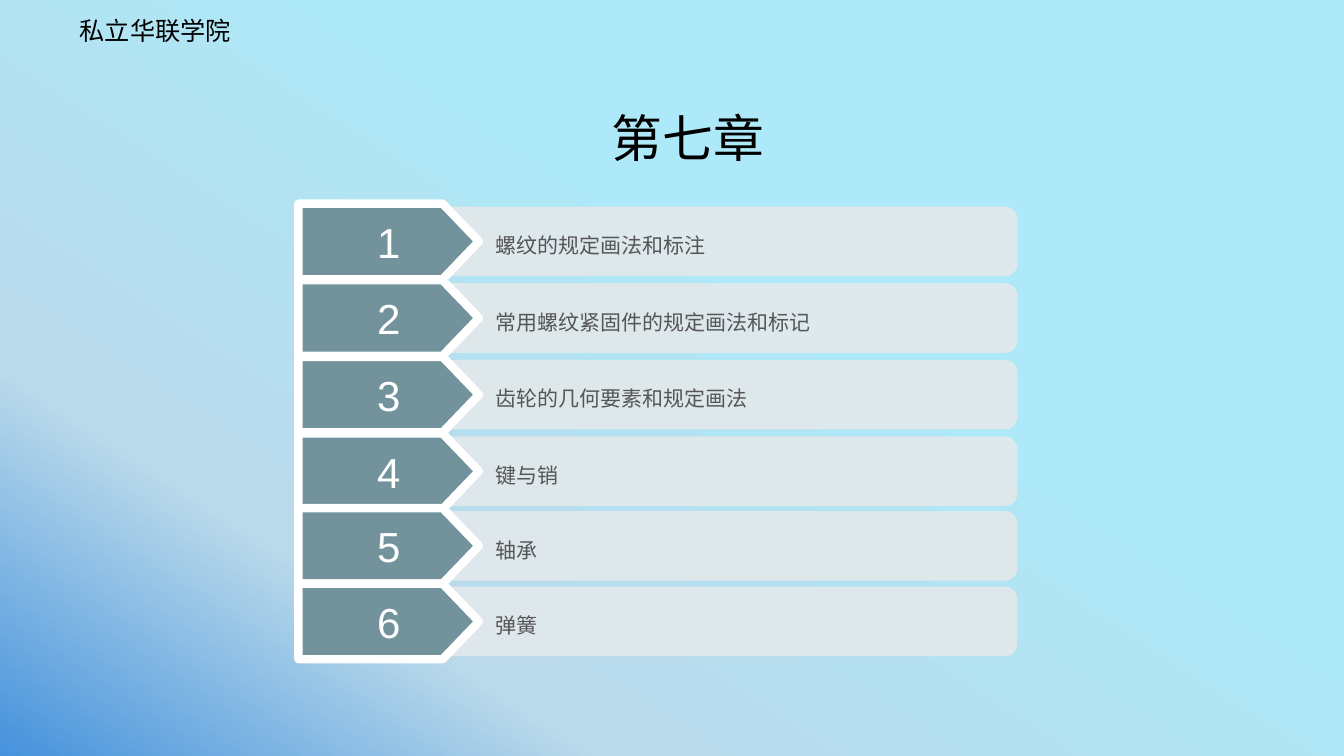
from copy import deepcopy
from math import cos, sin, radians
from pptx import Presentation
from pptx.dml.color import RGBColor as RGB
from pptx.enum.shapes import MSO_SHAPE as Shp
from pptx.enum.text import PP_ALIGN as Al, MSO_ANCHOR as Anc
from pptx.oxml.ns import qn
from pptx.util import Pt
from lxml.etree import SubElement as Sub

PX = 9144  # 100 px to the inch
theme = dict(
    sky=[(0, "4692DC"), 24, "BADAEB", 62, "ADE9F8"][:1]
    + [(0.24, "BADAEB"), (0.62, "ADE9F8")],
    ink="000000", bar="E3E9EB", tag="72939C", edge="FFFFFF", note="565656",
    face="Arial", cjk="Noto Sans CJK JP",
    head=18, title=36.3, item=15, num=30,
)
items = [
    (202, "螺纹的规定画法和标注"),
    (278, "常用螺纹紧固件的规定画法和标记"),
    (354, "齿轮的几何要素和规定画法"),
    (430, "键与销"),
    (504, "轴承"),
    (579, "弹簧"),
]


def write(shape, text, size, color, pad, face="face", align=Al.LEFT, gap=1.0,
          anchor=Anc.MIDDLE):
    frame = shape.text_frame
    frame.word_wrap = True
    frame.vertical_anchor = anchor
    (frame.margin_left, frame.margin_top,
     frame.margin_right, frame.margin_bottom) = [n * PX for n in pad]
    para = frame.paragraphs[0]
    para.text = text
    para.alignment = align
    para.line_spacing = gap
    font = para.font
    font.name, font.size = theme[face], Pt(theme[size])
    font.color.rgb = RGB.from_string(theme[color])


def paint(shape, color):
    shape.shadow.inherit = False
    shape.fill.solid()
    shape.fill.fore_color.rgb = RGB.from_string(theme[color])


deck = Presentation()
deck.slide_width, deck.slide_height = 1333 * PX, 750 * PX
slide = deck.slides.add_slide(deck.slide_layouts[6])
shapes = slide.shapes

# Background gradient, rising to the upper right
fill = slide.background.fill
fill.gradient()
fill.gradient_angle = 57
stop = slide._element.find(".//" + qn("a:gs"))
stop.addnext(deepcopy(stop))
for stop, (pos, color) in zip(fill.gradient_stops, theme["sky"]):
    stop.position = pos
    stop.color.rgb = RGB.from_string(color)

# School name and chapter title
head = shapes.add_textbox(74 * PX, 10 * PX, 294 * PX, 40 * PX)
write(head, "私立华联学院", "head", "ink", (5, 5, 5, 5), "cjk", anchor=Anc.TOP)
title = shapes.add_textbox(387 * PX, 117 * PX, 591 * PX, 57 * PX)
write(title, "第七章", "title", "ink", (10, 5, 10, 5), align=Al.CENTER, gap=0.7,
      anchor=Anc.TOP)

# Numbered rows: a bar rounded on the right, under an arrow tag
left, right, tall, rad = 442, 1009, 69, 12
turn = [radians(deg) for deg in range(0, 91, 15)]
for num, (top, text) in enumerate(items, 1):
    high = top + 3
    low = high + tall
    upper = [(right - rad + rad * sin(t), high + rad - rad * cos(t)) for t in turn]
    lower = [(right - rad + rad * cos(t), low - rad + rad * sin(t)) for t in turn]
    path = shapes.build_freeform(left * PX, high * PX)
    path.add_line_segments(
        [(round(x * PX), round(y * PX)) for x, y in upper + lower + [(left, low)]])
    bar = path.convert_to_shape()
    paint(bar, "bar")
    Sub(bar._element.find(".//" + qn("a:srgbClr")), qn("a:alpha"), val="90000")
    bar.line.fill.background()
    write(bar, text, "item", "note", (49, 0, 0, 0), gap=1.3)

    tag = shapes.add_shape(Shp.PENTAGON, 296 * PX, top * PX, 179 * PX, 75 * PX)
    tag.adjustments[0] = 0.48
    paint(tag, "tag")
    tag.line.color.rgb = RGB.from_string(theme["edge"])
    tag.line.width = Pt(6)
    write(tag, str(num), "num", "edge", (28, 5, 10, 5), align=Al.CENTER)

deck.save("out.pptx")
